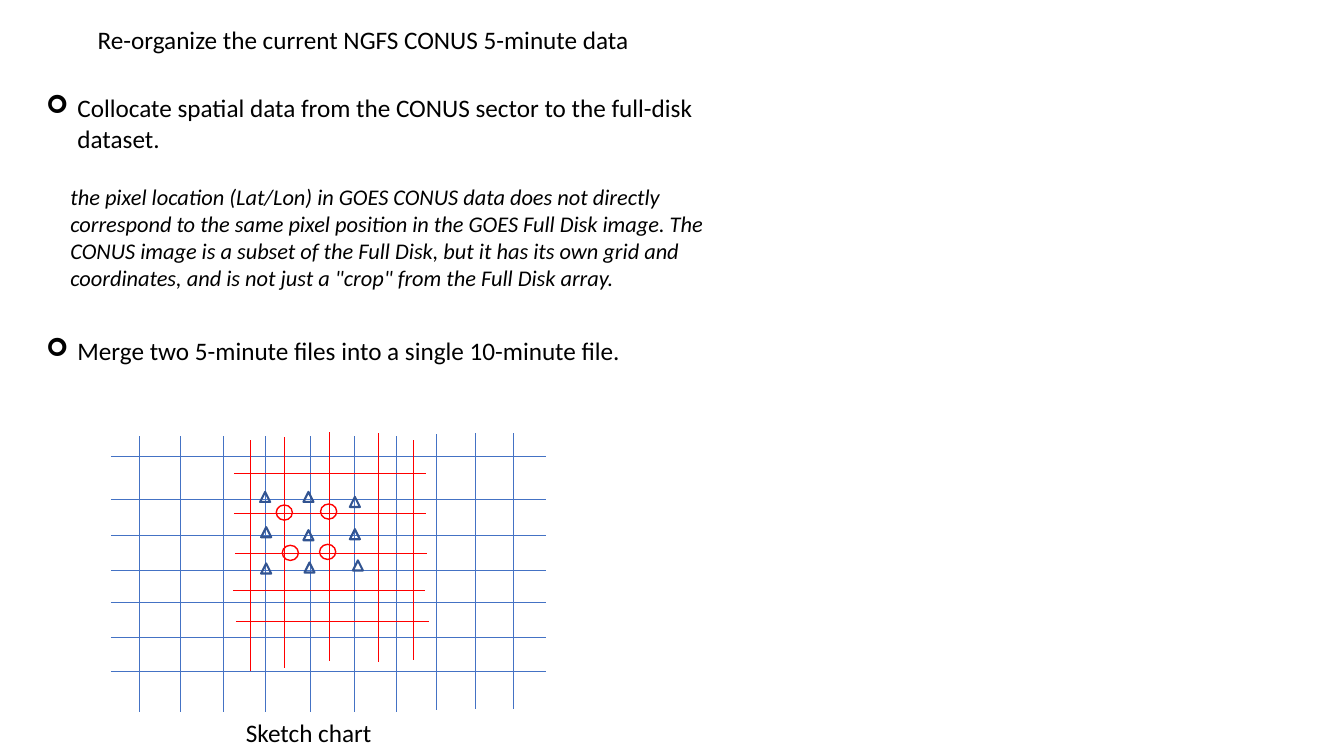
from lxml.etree import SubElement
from pptx import Presentation
from pptx.dml.color import RGBColor
from pptx.enum.shapes import MSO_CONNECTOR, MSO_SHAPE
from pptx.enum.text import MSO_ANCHOR, MSO_AUTO_SIZE, PP_ALIGN
from pptx.oxml.ns import qn
from pptx.util import Inches, Pt

COLORS = {"text": "000000", "full disk": "4472C4", "conus": "FF0000", "triangle": "325491"}

deck = Presentation()
deck.slide_width, deck.slide_height = Inches(13.33), Inches(7.5)
page = deck.slides.add_slide(deck.slide_layouts[5])


def write(box, text, size=18, italic=False, bullet=False, align=PP_ALIGN.LEFT):
    frame = box.text_frame
    frame.word_wrap = True
    frame.auto_size = MSO_AUTO_SIZE.NONE
    frame.vertical_anchor = MSO_ANCHOR.TOP
    frame.text = text
    para = frame.paragraphs[0]
    para.alignment = align
    if bullet:
        properties = para._p.get_or_add_pPr()
        properties.set("marL", str(Inches(0.31)))
        properties.set("indent", str(-Inches(0.31)))
        SubElement(properties, qn("a:buFont"), typeface="Wingdings")
        SubElement(properties, qn("a:buChar"), char="➢")
    para.font.name = "Calibri"
    para.font.size = Pt(size)
    para.font.italic = italic
    para.font.color.rgb = RGBColor.from_string(COLORS["text"])


def draw_line(x1, y1, x2, y2, color):
    line = page.shapes.add_connector(
        MSO_CONNECTOR.STRAIGHT, Inches(x1), Inches(y1), Inches(x2), Inches(y2))
    line.line.color.rgb = RGBColor.from_string(COLORS[color])
    line.line.width = Pt(0.5)
    SubElement(line._element.spPr, qn("a:effectLst"))


# Title and text
title = page.shapes.title
title.left, title.top, title.width, title.height = map(Inches, (0.77, 0.19, 5.72, 0.4))
write(title, "Re-organize the current NGFS CONUS 5-minute data ", align=PP_ALIGN.CENTER)

texts = [
    ((0.36, 0.87, 6.67, 0.71), {"bullet": True},
     "Collocate spatial data from the CONUS sector to the full-disk dataset."),
    ((0.6, 1.77, 6.67, 1.18), {"size": 16, "italic": True},
     "the pixel location (Lat/Lon) in GOES CONUS data does not directly correspond to the "
     "same pixel position in the GOES Full Disk image. The CONUS image is a subset of the "
     "Full Disk, but it has its own grid and coordinates, and is not just a \"crop\" from "
     "the Full Disk array."),
    ((0.36, 3.28, 5.97, 0.4), {"bullet": True},
     "Merge two 5-minute files into a single 10-minute file."),
    ((2.34, 7.07, 2.01, 0.4), {}, "Sketch chart"),
]
for place, style, text in texts:
    write(page.shapes.add_textbox(*map(Inches, place)), text, **style)

# Full-disk grid
for y in (4.53, 4.95, 5.31, 5.66, 5.98, 6.32, 6.66):
    draw_line(1.1, y, 5.42, y, "full disk")
for x in (1.38, 1.79, 2.22, 2.63, 3.08, 3.51, 3.93, 4.33, 4.71, 5.09):
    top = 4.33 if x < 4 else 4.31 if x < 4.5 else 4.3
    draw_line(x, top, x, top + 2.73, "full disk")

# CONUS grid
for x, top, bottom in ((2.48, 4.37, 6.66), (2.82, 4.34, 6.63), (3.27, 4.29, 6.56),
                       (3.75, 4.3, 6.57), (4.1, 4.37, 6.55)):
    draw_line(x, top, x, bottom, "conus")
for y, left in ((4.7, 2.32), (5.09, 2.32), (5.49, 2.33), (5.86, 2.31), (6.16, 2.34)):
    draw_line(left, y, left + 1.91, y, "conus")

# Pixel centres of both grids
circles = [(2.74, 5.01), (3.18, 5), (2.8, 5.41), (3.17, 5.4)]
triangles = [(2.58, 4.88), (3.01, 4.88), (3.47, 4.93),
             (2.59, 5.23), (3.01, 5.26), (3.47, 5.25),
             (2.59, 5.59), (3.02, 5.58), (3.5, 5.56)]
markers = [
    (MSO_SHAPE.FLOWCHART_CONNECTOR, circles, 0.16, 0.15, "conus", 1),
    (MSO_SHAPE.ISOSCELES_TRIANGLE, triangles, 0.1, 0.1, "triangle", 1.5),
]
for kind, corners, width, height, color, weight in markers:
    for left, top in corners:
        marker = page.shapes.add_shape(
            kind, Inches(left), Inches(top), Inches(width), Inches(height))
        marker.shadow.inherit = False
        marker.fill.background()
        marker.line.color.rgb = RGBColor.from_string(COLORS[color])
        marker.line.width = Pt(weight)

deck.save("out.pptx")
